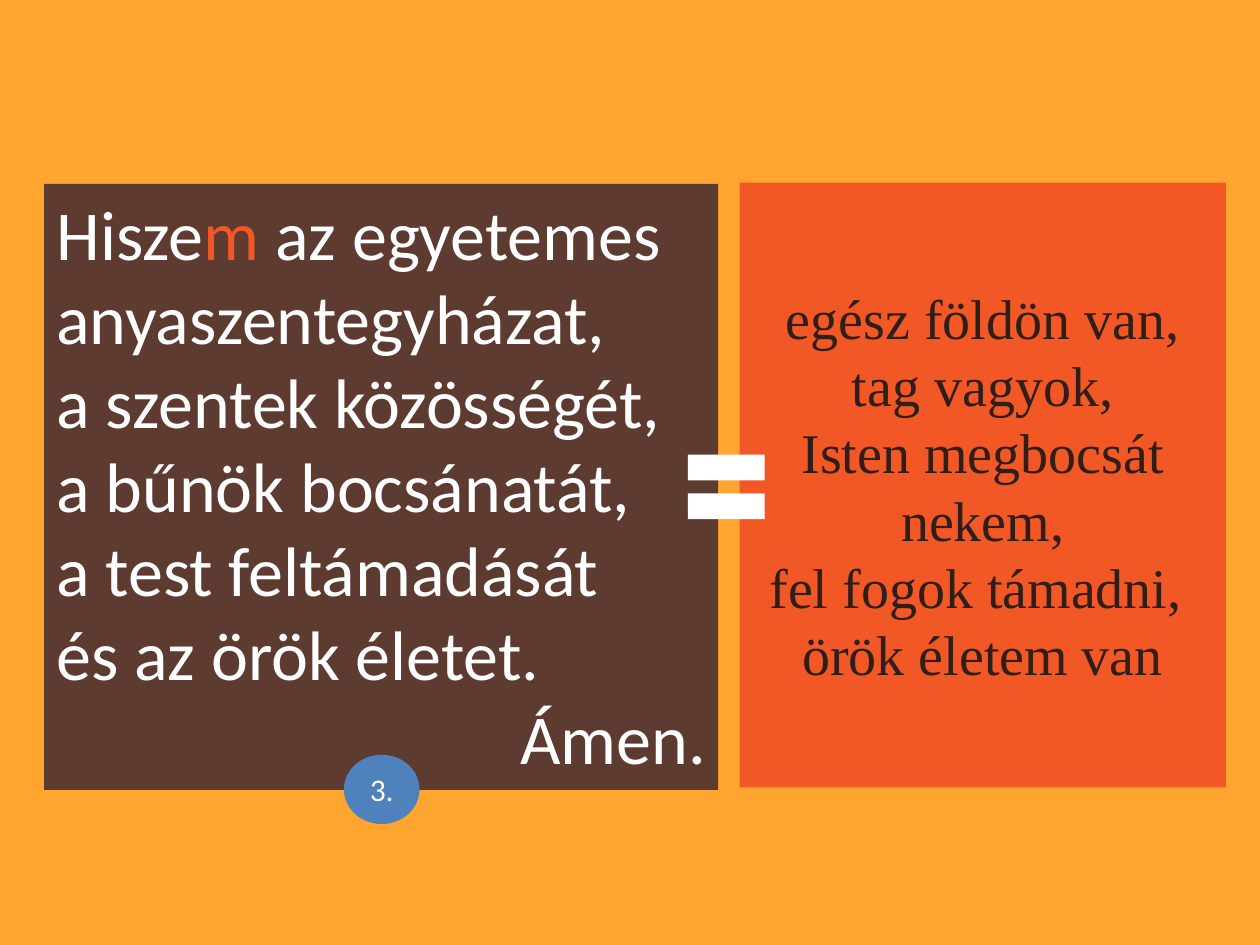
from pptx import Presentation
from pptx.dml.color import RGBColor
from pptx.enum.shapes import MSO_SHAPE
from pptx.enum.text import MSO_ANCHOR, PP_ALIGN
from pptx.util import Inches, Pt

AMBER = RGBColor(0xFF, 0xA5, 0x30)
BROWN = RGBColor(0x5E, 0x3B, 0x30)
ORANGE = RGBColor(0xF1, 0x58, 0x26)
DARK = RGBColor(0x30, 0x1E, 0x18)
BLUE = RGBColor(0x4F, 0x81, 0xBD)
WHITE = RGBColor(0xFF, 0xFF, 0xFF)

CREED = [
    [("Hisze", WHITE), ("m", ORANGE), (" az egyetemes anyaszentegyházat,", WHITE)],
    "a szentek közösségét,",
    "a bűnök bocsánatát,",
    "a test feltámadását",
    "és az örök életet.",
    "Ámen.",
]
MEANING = [
    "egész földön van,",
    "tag vagyok,",
    "Isten megbocsát nekem,",
    "fel fogok támadni, ",
    "örök életem van",
]


def add_block(slide, kind, left, top, width, height, fill):
    block = slide.shapes.add_shape(
        kind, Inches(left), Inches(top), Inches(width), Inches(height))
    block.shadow.inherit = False
    block.fill.solid()
    block.fill.fore_color.rgb = fill
    block.line.fill.background()
    return block


def write(block, lines, *, size, font="Calibri", color=WHITE,
          align=PP_ALIGN.CENTER, anchor=MSO_ANCHOR.MIDDLE):
    """Write one paragraph per line; a line is a string or (text, colour) pairs."""
    frame = block.text_frame
    frame.word_wrap = True
    frame.vertical_anchor = anchor
    for index, line in enumerate(lines):
        paragraph = frame.add_paragraph() if index else frame.paragraphs[0]
        paragraph.alignment = align
        pieces = [(line, color)] if isinstance(line, str) else line
        for words, tint in pieces:
            run = paragraph.add_run()
            run.text = words
            run.font.size = Pt(size)
            run.font.name = font
            run.font.color.rgb = tint


def main():
    prs = Presentation()
    prs.slide_width, prs.slide_height = Inches(10), Inches(7.5)
    slide = prs.slides.add_slide(prs.slide_layouts[6])
    slide.background.fill.solid()
    slide.background.fill.fore_color.rgb = AMBER

    creed = add_block(slide, MSO_SHAPE.RECTANGLE, 0.35, 1.46, 5.35, 4.81, BROWN)
    write(creed, CREED, size=40, align=PP_ALIGN.LEFT, anchor=MSO_ANCHOR.TOP)
    creed.text_frame.paragraphs[-1].alignment = PP_ALIGN.RIGHT

    meaning = add_block(slide, MSO_SHAPE.RECTANGLE, 5.87, 1.45, 3.86, 4.8, ORANGE)
    write(meaning, MEANING, size=32, font="Times New Roman", color=DARK)

    number = add_block(slide, MSO_SHAPE.OVAL, 2.73, 5.99, 0.6, 0.55, BLUE)
    write(number, ["3."], size=18)

    add_block(slide, MSO_SHAPE.MATH_EQUAL, 5.35, 3.43, 0.83, 0.87, WHITE)
    prs.save("out.pptx")


if __name__ == "__main__":
    main()
